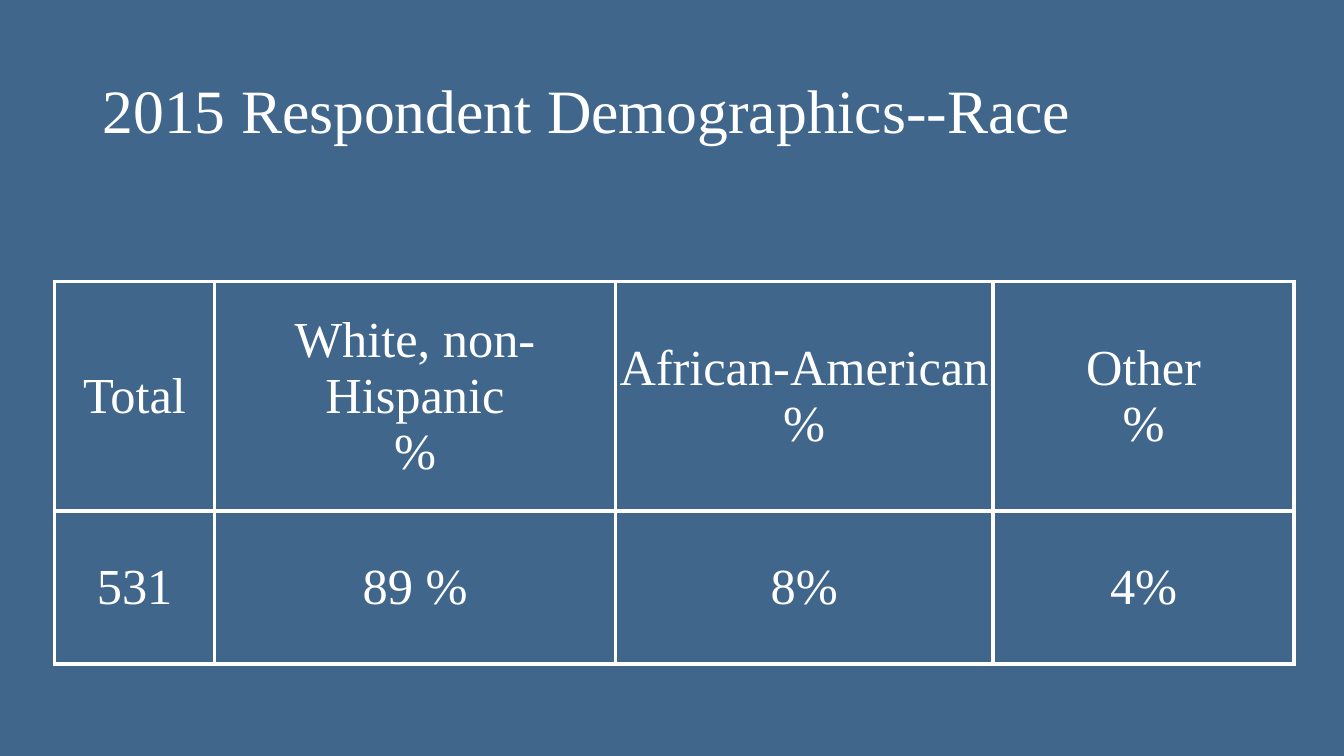
from lxml import etree
from pptx import Presentation
from pptx.dml.color import RGBColor
from pptx.enum.text import MSO_ANCHOR, PP_ALIGN
from pptx.oxml.ns import qn
from pptx.util import Pt

MIDDLE = MSO_ANCHOR.MIDDLE
CENTER = PP_ALIGN.CENTER
LEFT = PP_ALIGN.LEFT
FONT = "Times New Roman"
WHITE = "FFFFFF"
BLUE = "40668C"
BORDER_WIDTH = Pt(3)


def color(hex_value):
    return RGBColor.from_string(hex_value)


def style_paragraph(para, size, alignment):
    para.alignment = alignment
    for span in para.runs:
        span.font.name = FONT
        span.font.size = Pt(size)
        span.font.bold = False
        span.font.color.rgb = color(WHITE)


deck = Presentation()
deck.slide_width = Pt(960)
deck.slide_height = Pt(540)
page = deck.slides.add_slide(deck.slide_layouts[5])
page.background.fill.solid()
page.background.fill.fore_color.rgb = color(BLUE)

title = page.shapes.title
title.left, title.top, title.width, title.height = Pt(66), Pt(28.8), Pt(828), Pt(104.4)
title.text_frame.text = "2015 Respondent Demographics--Race"
title.text_frame.vertical_anchor = MIDDLE
title.text_frame.word_wrap = True
title_para = title.text_frame.paragraphs[0]
title_para.line_spacing = 0.9
style_paragraph(title_para, 44, LEFT)

rows = [
    ["Total", "White, non-Hispanic\n%", "African-American\n%", "Other\n%"],
    ["531", "89 %", "8%", "4%"],
]
column_widths = [114.3, 286.3, 269.7, 215.2]
row_heights = [163.7, 109.4]
space_after = [0, 12]

frame = page.shapes.add_table(
    len(rows), len(column_widths), Pt(39), Pt(201.1),
    Pt(sum(column_widths)), Pt(sum(row_heights)),
)
table = frame.table
table.first_row = False
table.horz_banding = False
for column, width in zip(table.columns, column_widths):
    column.width = Pt(width)

for row_index, texts in enumerate(rows):
    table.rows[row_index].height = Pt(row_heights[row_index])
    for column_index, text in enumerate(texts):
        cell = table.cell(row_index, column_index)
        cell.text_frame.text = text
        cell.vertical_anchor = MIDDLE
        cell.margin_left = cell.margin_right = cell.margin_top = Pt(0.7)
        cell.margin_bottom = Pt(0)
        for para in cell.text_frame.paragraphs:
            para.space_after = Pt(space_after[row_index])
            style_paragraph(para, 36, CENTER)

        properties = cell._tc.get_or_add_tcPr()
        for side in ("a:lnL", "a:lnR", "a:lnT", "a:lnB"):
            line = etree.SubElement(properties, qn(side), w=str(BORDER_WIDTH))
            line_fill = etree.SubElement(line, qn("a:solidFill"))
            etree.SubElement(line_fill, qn("a:srgbClr"), val=WHITE)
        cell.fill.background()

deck.save("out.pptx")
